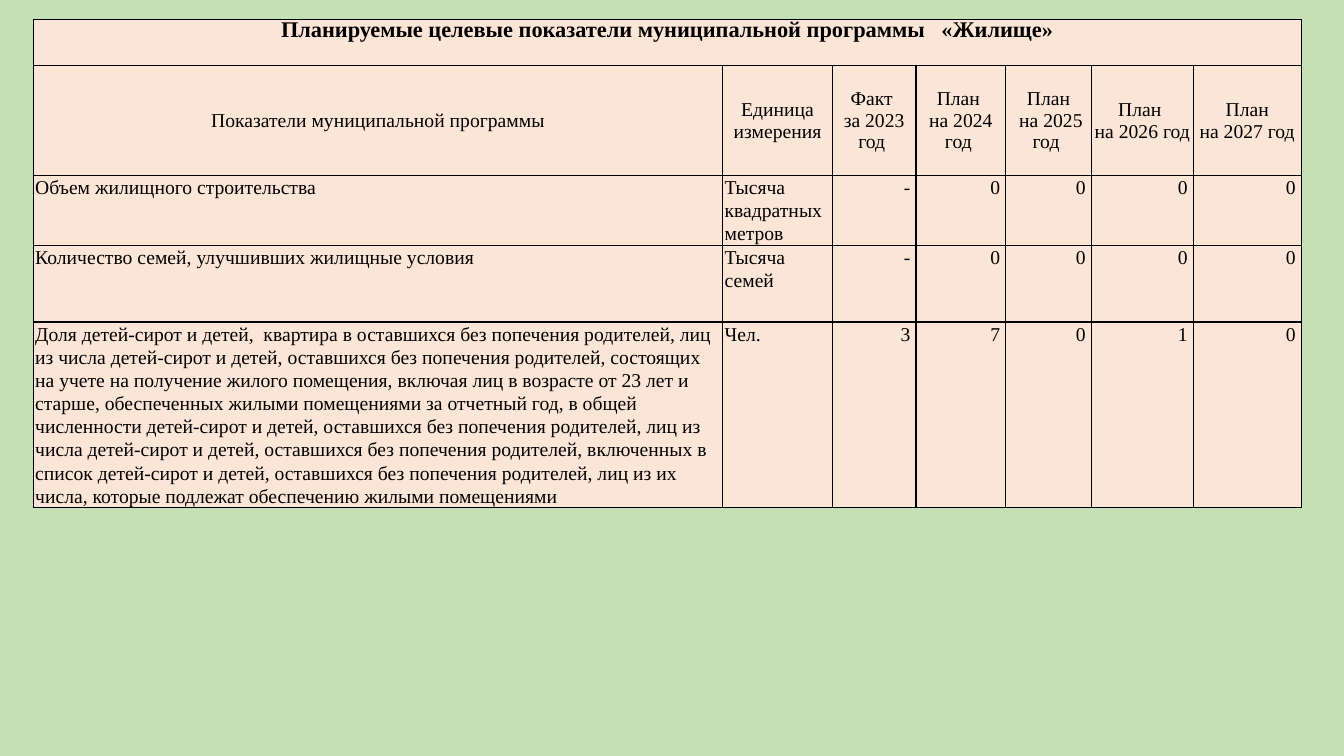
"""Build the slide with the target indicators of the housing programme."""
from dataclasses import dataclass

from lxml.etree import SubElement
from pptx import Presentation
from pptx.dml.color import RGBColor
from pptx.enum.text import MSO_ANCHOR, PP_ALIGN
from pptx.oxml.ns import qn
from pptx.table import _Cell
from pptx.util import Pt

GREEN = RGBColor(0xC5, 0xE0, 0xB4)
PEACH = RGBColor(0xFB, 0xE5, 0xD6)
BLACK = RGBColor(0, 0, 0)
FONT = "Times New Roman"
COLUMN_WIDTHS = (492.5, 78.3, 59.75, 64.1, 61.2, 72.8, 77.1)
ROW_HEIGHTS = (33, 78.5, 49.3, 55, 132)


@dataclass(frozen=True)
class CellStyle:
    """Text setting of one kind of cell."""

    align: PP_ALIGN
    anchor: MSO_ANCHOR
    side_margin: float
    line_spacing: float
    size: float = 14
    bold: bool = False


@dataclass(frozen=True)
class Indicator:
    """One indicator with its unit and yearly values."""

    name: str
    unit: str
    values: tuple[str, ...]


TITLE_STYLE = CellStyle(PP_ALIGN.CENTER, MSO_ANCHOR.TOP, 0.7, 0.9, 16, True)
HEADING_STYLE = CellStyle(PP_ALIGN.CENTER, MSO_ANCHOR.MIDDLE, 0.7, 1)
LABEL_STYLE = CellStyle(PP_ALIGN.LEFT, MSO_ANCHOR.TOP, 1.4, 1.07)
VALUE_STYLE = CellStyle(PP_ALIGN.RIGHT, MSO_ANCHOR.TOP, 4, 1.07)

TITLE = "Планируемые целевые показатели муниципальной программы   «Жилище»"
HEADINGS = (
    "Показатели муниципальной программы",
    "Единица измерения",
    "Факт \nза 2023 год ",
    "План \nна 2024 год ",
    "План\n на 2025 год ",
    "План \nна 2026 год ",
    "План\n на 2027 год ",
)
INDICATORS = (
    Indicator("Объем жилищного строительства", "Тысяча квадратных метров",
              ("-", "0", "0", "0", "0")),
    Indicator("Количество семей, улучшивших жилищные условия", "Тысяча семей",
              ("-", "0", "0", "0", "0")),
    Indicator(
        "Доля детей-сирот и детей,  квартира в оставшихся без попечения родителей, "
        "лиц из числа детей-сирот и детей, оставшихся без попечения родителей, "
        "состоящих на учете на получение жилого помещения, включая лиц в возрасте "
        "от 23 лет и старше, обеспеченных жилыми помещениями за отчетный год, "
        "в общей численности детей-сирот и детей, оставшихся без попечения "
        "родителей, лиц из числа детей-сирот и детей, оставшихся без попечения "
        "родителей, включенных в список детей-сирот и детей, оставшихся без "
        "попечения родителей, лиц из их числа, которые подлежат обеспечению "
        "жилыми помещениями",
        "Чел.", ("3", "7", "0", "1", "0")),
)


def frame_cell(cell: _Cell) -> None:
    """Give a cell black borders and the peach fill."""
    properties = cell._tc.get_or_add_tcPr()
    for side in ("a:lnL", "a:lnR", "a:lnT", "a:lnB"):
        border = SubElement(properties, qn(side), w=str(Pt(1)))
        SubElement(SubElement(border, qn("a:solidFill")), qn("a:srgbClr"), val=str(BLACK))
    cell.fill.solid()
    cell.fill.fore_color.rgb = PEACH


def write_cell(cell: _Cell, text: str, style: CellStyle) -> None:
    """Write text into a cell in the given style."""
    cell.vertical_anchor = style.anchor
    cell.margin_left = cell.margin_right = Pt(style.side_margin)
    cell.margin_top = cell.margin_bottom = Pt(0)
    cell.text_frame.text = text
    for paragraph in cell.text_frame.paragraphs:
        paragraph.alignment = style.align
        paragraph.line_spacing = style.line_spacing
        for run in paragraph.runs:
            run.font.name = FONT
            run.font.size = Pt(style.size)
            run.font.bold = style.bold
            run.font.color.rgb = BLACK


def main() -> None:
    """Build and save the slide."""
    presentation = Presentation()
    presentation.slide_width, presentation.slide_height = Pt(960), Pt(540)
    slide = presentation.slides.add_slide(presentation.slide_layouts[6])
    slide.background.fill.solid()
    slide.background.fill.fore_color.rgb = GREEN

    indicators = slide.shapes.add_table(
        len(ROW_HEIGHTS), len(COLUMN_WIDTHS), Pt(23.75), Pt(13.9),
        Pt(sum(COLUMN_WIDTHS)), Pt(sum(ROW_HEIGHTS))).table
    indicators.first_row = indicators.horz_banding = False
    for column, width in zip(indicators.columns, COLUMN_WIDTHS):
        column.width = Pt(width)
    for row, height in zip(indicators.rows, ROW_HEIGHTS):
        row.height = Pt(height)
    for cell in indicators.iter_cells():
        frame_cell(cell)

    title = indicators.cell(0, 0)
    title.merge(indicators.cell(0, len(COLUMN_WIDTHS) - 1))
    write_cell(title, TITLE, TITLE_STYLE)
    for column, heading in enumerate(HEADINGS):
        write_cell(indicators.cell(1, column), heading, HEADING_STYLE)
    for row, indicator in enumerate(INDICATORS, start=2):
        write_cell(indicators.cell(row, 0), indicator.name, LABEL_STYLE)
        write_cell(indicators.cell(row, 1), indicator.unit, LABEL_STYLE)
        for column, value in enumerate(indicator.values, start=2):
            write_cell(indicators.cell(row, column), value, VALUE_STYLE)

    presentation.save("out.pptx")


if __name__ == "__main__":
    main()
